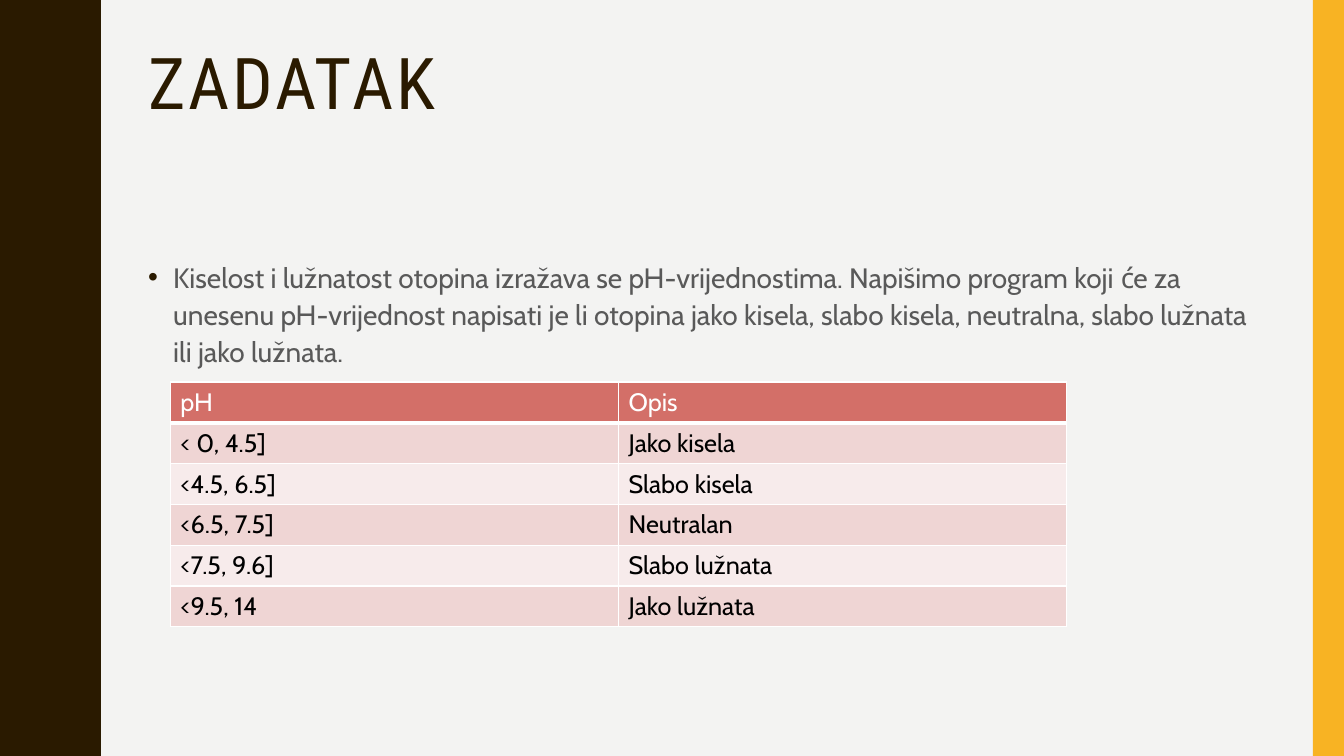
from lxml.etree import SubElement
from pptx import Presentation
from pptx.dml.color import RGBColor
from pptx.enum.shapes import MSO_SHAPE as SHAPE
from pptx.enum.text import MSO_ANCHOR as ANCHOR, PP_ALIGN as ALIGN
from pptx.oxml.ns import qn
from pptx.util import Inches, Pt

WIDTH, HEIGHT = 13.33, 7.5
COLORS = {
    "background": "F3F3F2", "brown": "2A1A00", "yellow": "F8B323",
    "body": "595959", "header": "D36F68", "band": "EFD5D4",
    "light": "F7EBEB", "white": "FFFFFF", "black": "000000",
}
TITLE_FONT = {"name": "Roboto Condensed", "size": Pt(51), "bold": False}
BODY_FONT = {"name": "Cabin", "size": Pt(20), "bold": False}
CELL_FONT = {"name": "Cabin", "size": Pt(18), "bold": False}

TASK = ("Kiselost i lužnatost otopina izražava se pH-vrijednostima. "
        "Napišimo program koji će za unesenu pH-vrijednost napisati je li "
        "otopina jako kisela, slabo kisela, neutralna, slabo lužnata ili "
        "jako lužnata.")
PH_ROWS = [
    ("pH", "Opis"),
    ("< 0, 4.5]", "Jako kisela"),
    ("<4.5, 6.5]", "Slabo kisela"),
    ("<6.5, 7.5]", "Neutralan"),
    ("<7.5, 9.6]", "Slabo lužnata"),
    ("<9.5, 14", "Jako lužnata"),
]

# One rising half of a wave: x, and y from the start of the wave.
WAVE_LENGTH = 1.5
HALF_WAVE = [
    (0.78, 0), (0.78, 0.07), (0.79, 0.14), (0.8, 0.2), (0.81, 0.25),
    (0.83, 0.29), (0.85, 0.33), (0.87, 0.38), (0.89, 0.42), (0.91, 0.46),
    (0.93, 0.5), (0.95, 0.55), (0.96, 0.61), (0.97, 0.68), (0.97, 0.75),
]


def rgb(name):
    return RGBColor.from_string(COLORS[name])


def set_font(r, values, color):
    for key, value in values.items():
        setattr(r.font, key, value)
    r.font.color.rgb = rgb(color)


def paint(sp, color):
    sp.shadow.inherit = False
    sp.fill.solid()
    sp.fill.fore_color.rgb = rgb(color)
    sp.line.fill.background()


def add_wavy_band(slide, left, top, height):
    """Draw the left band, whose right edge repeats one wave downwards."""
    wave = HALF_WAVE + [(x, WAVE_LENGTH - y) for x, y in HALF_WAVE[-2::-1]]
    count = round(height / WAVE_LENGTH)
    edge = [(left + x, top + i * WAVE_LENGTH + y)
            for i in range(count) for x, y in wave]
    builder = slide.shapes.build_freeform(left, top, scale=Inches(1))
    builder.add_line_segments(edge + [(left, top + height)], close=True)
    paint(builder.convert_to_shape(), "brown")


def add_side_bar(slide, *box):
    bar = slide.shapes.add_shape(SHAPE.RECTANGLE, *map(Inches, box))
    paint(bar, "yellow")


def add_title(slide, text, left, top, width, height):
    title = slide.shapes.title
    title.left, title.top = Inches(left), Inches(top)
    title.width, title.height = Inches(width), Inches(height)
    tf = title.text_frame
    tf.word_wrap = True
    tf.vertical_anchor = ANCHOR.TOP
    p = tf.paragraphs[0]
    p.alignment = ALIGN.LEFT
    p.line_spacing = 0.9
    r = p.add_run()
    r.text = text
    set_font(r, TITLE_FONT, "brown")
    r.font._element.set("spc", "200")


def add_bullet(p, color):
    pPr = p._p.get_or_add_pPr()
    indent = Inches(0.25)
    pPr.set("marL", str(indent))
    pPr.set("indent", str(-indent))
    bullet_color = SubElement(pPr, qn("a:buClr"))
    SubElement(bullet_color, qn("a:srgbClr"), val=COLORS[color])
    SubElement(pPr, qn("a:buFont"), typeface="Arial")
    SubElement(pPr, qn("a:buChar"), char="•")


def add_task(slide, text, *box):
    tf = slide.shapes.add_textbox(*map(Inches, box)).text_frame
    tf.word_wrap = True
    p = tf.paragraphs[0]
    p.line_spacing = 1.1
    p.space_before = Pt(7)
    add_bullet(p, "brown")
    r = p.add_run()
    r.text = text
    set_font(r, BODY_FONT, "body")


def set_borders(cell, widths):
    """Add white cell borders; widths maps each side to points."""
    tcPr = cell._tc.get_or_add_tcPr()
    for side, width in widths.items():
        line = SubElement(tcPr, qn(f"a:ln{side}"), w=str(Pt(width)))
        fill = SubElement(line, qn("a:solidFill"))
        SubElement(fill, qn("a:srgbClr"), val=COLORS["white"])


def add_ph_table(slide, rows, left, top, width, row_height):
    frame = slide.shapes.add_table(
        len(rows), len(rows[0]), Inches(left), Inches(top),
        Inches(width), Inches(row_height * len(rows)))
    table = frame.table
    for i, values in enumerate(rows):
        table.rows[i].height = Inches(row_height)
        is_header = i == 0
        fill = "header" if is_header else "band" if i % 2 else "light"
        for j, value in enumerate(values):
            cell = table.cell(i, j)
            set_borders(cell, {"L": 1, "R": 1, "T": 1,
                               "B": 3 if is_header else 1})
            cell.fill.solid()
            cell.fill.fore_color.rgb = rgb(fill)
            r = cell.text_frame.paragraphs[0].add_run()
            r.text = value
            set_font(r, CELL_FONT, "white" if is_header else "black")


def build_task_slide(prs):
    slide = prs.slides.add_slide(prs.slide_layouts[5])
    slide.background.fill.solid()
    slide.background.fill.fore_color.rgb = rgb("background")
    add_wavy_band(slide, 0, 0, HEIGHT)
    add_side_bar(slide, 13.02, 0, 0.31, HEIGHT)
    add_title(slide, "ZADATAK", 1.37, 0.42, 11.13, 1.63)
    add_task(slide, TASK, 1.37, 2.5, 11.13, 1.29)
    add_ph_table(slide, PH_ROWS, 1.69, 3.79, 8.89, 0.405)


def main():
    prs = Presentation()
    prs.slide_width, prs.slide_height = Inches(WIDTH), Inches(HEIGHT)
    build_task_slide(prs)
    prs.save("out.pptx")


if __name__ == "__main__":
    main()
